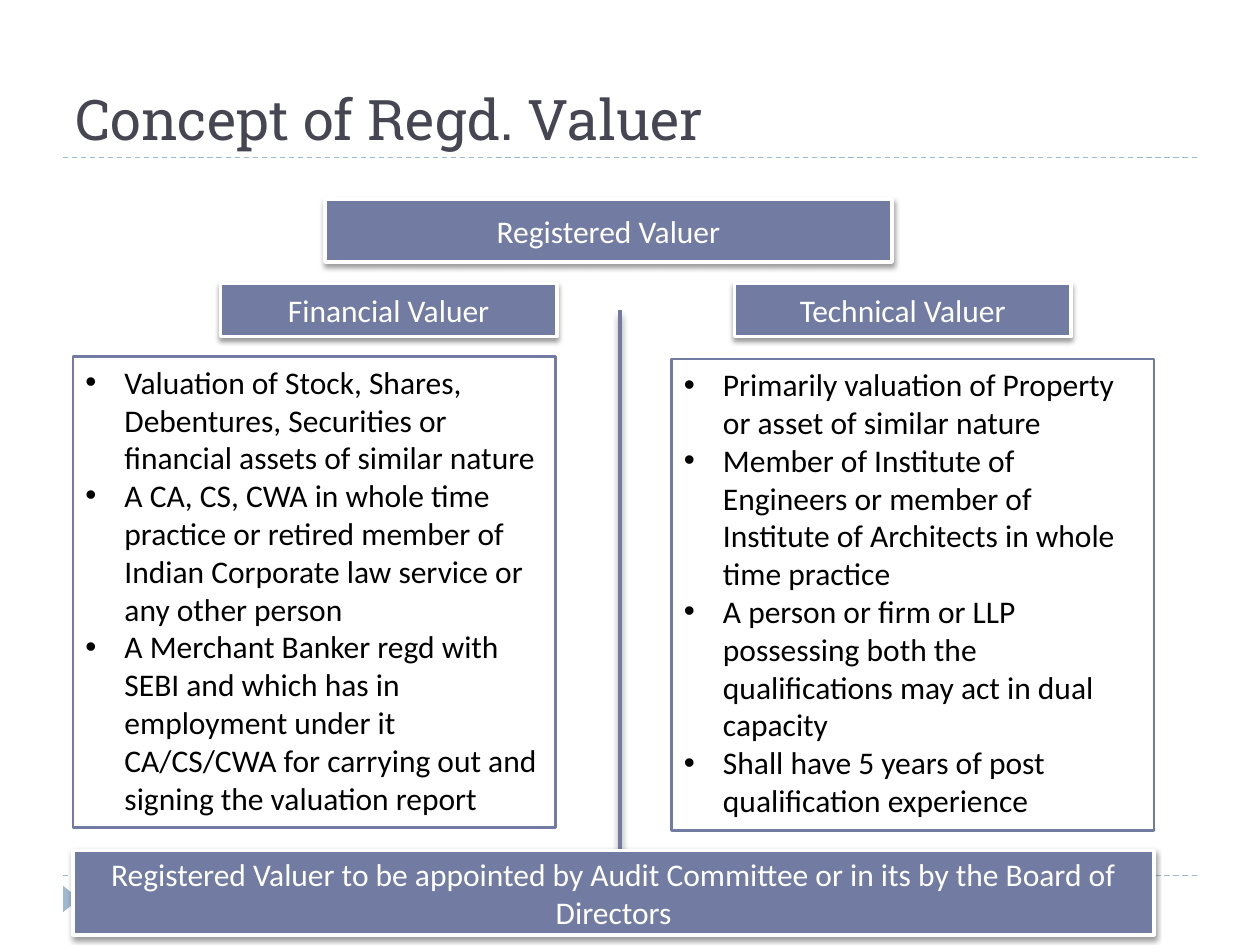
from dataclasses import dataclass

from lxml import etree
from pptx import Presentation
from pptx import util as u
from pptx.dml.color import RGBColor
from pptx.enum import dml, shapes, text
from pptx.oxml.ns import qn

PX = 9144
COLORS = {
    "white": "FFFFFF",
    "black": "000000",
    "title": "464653",
    "accent": "727CA3",
    "pale": "9FB8CD",
}
BODY_FONT = "Calibri"
TITLE_FONT = "Roboto Slab"
BODY_SIZE = 18


@dataclass
class Box:
    x: int
    y: int
    w: int
    h: int


@dataclass
class Banner:
    box: Box
    label: str


@dataclass
class Panel:
    box: Box
    items: list[str]


@dataclass
class Rule:
    x1: int
    y1: int
    x2: int
    y2: int
    color: str
    width: float
    dashed: bool = False
    shadow: tuple[float, float] | None = None


RULES = [
    Rule(50, y, 950, y, "pale", 0.75, dashed=True) for y in (695, 125)
]
DIVIDER = Rule(492, 246, 492, 675, "accent", 2, shadow=(4, 3.4))
BANNERS = [
    Banner(Box(258, 158, 450, 50), "Registered Valuer"),
    Banner(Box(175, 225, 267, 42), "Financial Valuer"),
    Banner(Box(583, 225, 267, 42), "Technical Valuer"),
]
PANELS = [
    Panel(Box(58, 283, 383, 374), [
        "Valuation of Stock, Shares, Debentures, Securities or financial "
        "assets of similar nature",
        "A CA, CS, CWA in whole time practice or retired member of Indian "
        "Corporate law service or any other person",
        "A Merchant Banker regd with SEBI and which has in employment under "
        "it CA/CS/CWA for carrying out and signing the valuation report",
    ]),
    Panel(Box(533, 285, 383, 374), [
        "Primarily valuation of Property or asset of similar nature",
        "Member of Institute of Engineers or member of Institute of "
        "Architects in whole time practice",
        "A person or firm or LLP possessing both the qualifications may act "
        "in dual capacity",
        "Shall have 5 years of post qualification experience",
    ]),
]
FOOTER = Banner(
    Box(58, 675, 858, 67),
    "Registered Valuer to be appointed by Audit Committee or in its by the "
    "Board of Directors",
)


def px(n: int) -> u.Emu:
    return u.Emu(n * PX)


def frame(b: Box) -> tuple:
    return px(b.x), px(b.y), px(b.w), px(b.h)


def rgb(name: str) -> RGBColor:
    return RGBColor.from_string(COLORS[name])


def add_run(p, words: str, color: str, size=BODY_SIZE, font=BODY_FONT) -> None:
    r = p.add_run()
    r.text = words
    r.font.size = u.Pt(size)
    r.font.name = font
    r.font.color.rgb = rgb(color)


def add_shadow(effects, blur: float, dist: float) -> None:
    shadow = etree.SubElement(
        effects, qn("a:outerShdw"), blurRad=str(int(u.Pt(blur))),
        dist=str(int(u.Pt(dist))), dir="5400000", rotWithShape="0")
    color = etree.SubElement(shadow, qn("a:srgbClr"), val=COLORS["black"])
    etree.SubElement(color, qn("a:alpha"), val="40000")


def add_bullet(p) -> None:
    pr = p._p.get_or_add_pPr()
    pr.set("marL", str(px(31)))
    pr.set("indent", str(-px(31)))
    etree.SubElement(pr, qn("a:buFont"), typeface="Arial")
    etree.SubElement(pr, qn("a:buChar"), char="•")


def draw_shape(s, kind, b: Box, fill: str, line: str | None, width: float = 0):
    sp = s.shapes.add_shape(kind, *frame(b))
    sp.shadow.inherit = False
    sp.fill.solid()
    sp.fill.fore_color.rgb = rgb(fill)
    if line is None:
        sp.line.fill.background()
    else:
        sp.line.color.rgb = rgb(line)
        sp.line.width = u.Pt(width)
    return sp


def draw_rule(s, rule: Rule) -> None:
    c = s.shapes.add_connector(
        shapes.MSO_CONNECTOR.STRAIGHT,
        px(rule.x1), px(rule.y1), px(rule.x2), px(rule.y2))
    c.line.color.rgb = rgb(rule.color)
    c.line.width = u.Pt(rule.width)
    if rule.dashed:
        c.line.dash_style = dml.MSO_LINE.DASH
    effects = etree.SubElement(c._element.spPr, qn("a:effectLst"))
    if rule.shadow:
        add_shadow(effects, *rule.shadow)


def draw_title(s, b: Box, words: str) -> None:
    tf = s.shapes.add_textbox(*frame(b)).text_frame
    tf.word_wrap = True
    tf.vertical_anchor = text.MSO_ANCHOR.BOTTOM
    add_run(tf.paragraphs[0], words, "title", 32, TITLE_FONT)


def draw_banner(s, banner: Banner) -> None:
    sp = draw_shape(s, shapes.MSO_SHAPE.RECTANGLE, banner.box,
                    "accent", "white", 2)
    add_shadow(sp._element.spPr.find(qn("a:effectLst")), 3, 2)
    tf = sp.text_frame
    tf.word_wrap = True
    tf.vertical_anchor = text.MSO_ANCHOR.MIDDLE
    p = tf.paragraphs[0]
    p.alignment = text.PP_ALIGN.CENTER
    add_run(p, banner.label, "white")


def draw_panel(s, panel: Panel) -> None:
    sp = draw_shape(s, shapes.MSO_SHAPE.RECTANGLE, panel.box,
                    "white", "accent", 1.5)
    tf = sp.text_frame
    tf.word_wrap = True
    tf.auto_size = text.MSO_AUTO_SIZE.SHAPE_TO_FIT_TEXT
    tf.vertical_anchor = text.MSO_ANCHOR.TOP
    for i, item in enumerate(panel.items):
        p = tf.add_paragraph() if i else tf.paragraphs[0]
        p.alignment = text.PP_ALIGN.LEFT
        add_bullet(p)
        add_run(p, item, "black")


def main() -> None:
    prs = Presentation()
    prs.slide_width, prs.slide_height = px(1000), px(750)
    s = prs.slides.add_slide(prs.slide_layouts[6])
    for rule in RULES:
        draw_rule(s, rule)
    marker = draw_shape(s, shapes.MSO_SHAPE.ISOSCELES_TRIANGLE,
                        Box(46, 707, 21, 13), "pale", None)
    marker.rotation = 90
    draw_title(s, Box(50, 17, 900, 108), "Concept of Regd. Valuer")
    for banner in BANNERS:
        draw_banner(s, banner)
    draw_rule(s, DIVIDER)
    for panel in PANELS:
        draw_panel(s, panel)
    draw_banner(s, FOOTER)
    prs.save("out.pptx")


if __name__ == "__main__":
    main()
